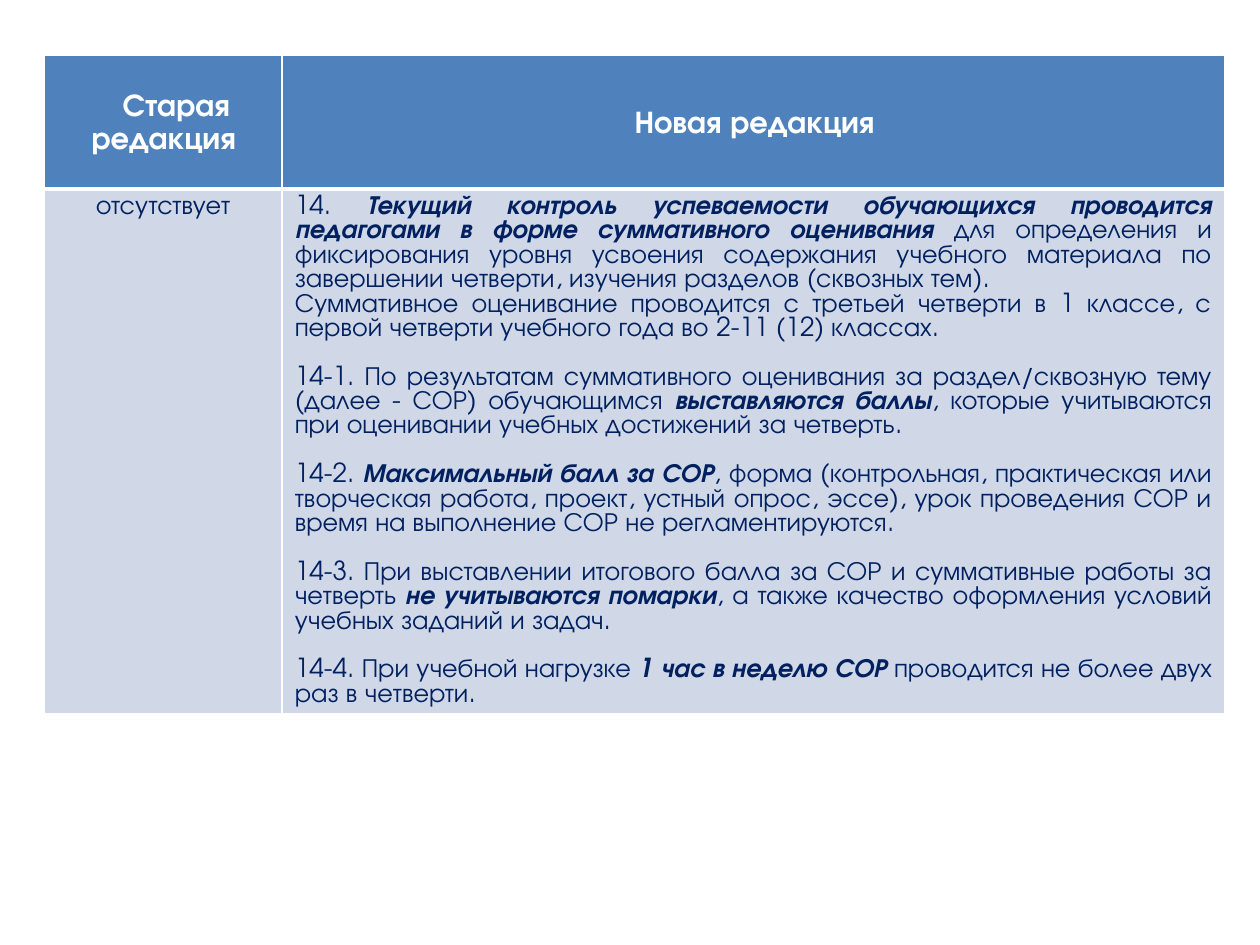
from lxml import etree
from pptx import Presentation
from pptx.dml.color import RGBColor
from pptx.enum.text import MSO_ANCHOR, PP_ALIGN
from pptx.oxml.ns import qn
from pptx.util import Inches, Pt

CENTER, JUSTIFY = PP_ALIGN.CENTER, PP_ALIGN.JUSTIFY
MIDDLE = MSO_ANCHOR.MIDDLE
WHITE = RGBColor(0xFF, 0xFF, 0xFF)
NAVY = RGBColor(0x00, 0x20, 0x60)
HEADER_BLUE = RGBColor(0x4F, 0x81, 0xBD)
BODY_BLUE = RGBColor(0xD0, 0xD8, 0xE8)
FONT = "TeX Gyre Adventor"
BLANK_LAYOUT = 6
COLUMN_WIDTHS = (1.89, 7.48)
ROW_HEIGHTS = (1.06, 4.15)
HEADERS = (("Старая редакция", 0.01, 0.2), ("Новая редакция", 0.02, 0))
ABSENT = "отсутствует"

# Each paragraph alternates plain and emphasised text, starting with plain.
NEW_WORDING = (
    (("14. ",
      "Текущий контроль успеваемости обучающихся проводится педагогами "
      "в форме суммативного оценивания ",
      "для определения и фиксирования уровня усвоения содержания учебного "
      "материала по завершении четверти, изучения разделов (сквозных тем)."), 0),
    (("Суммативное оценивание проводится с третьей четверти в 1 классе, "
      "с первой четверти учебного года во 2-11 (12) классах.",), 14),
    (("14-1. По результатам суммативного оценивания за раздел/сквозную тему "
      "(далее - СОР) обучающимся ",
      "выставляются баллы",
      ", которые учитываются при оценивании учебных достижений за четверть."), 14),
    (("14-2. ",
      "Максимальный балл за СОР",
      ", форма (контрольная, практическая или творческая работа, проект, "
      "устный опрос, эссе), урок проведения СОР и время на выполнение СОР "
      "не регламентируются."), 14),
    (("14-3. При выставлении итогового балла за СОР и суммативные работы "
      "за четверть ",
      "не учитываются помарки",
      ", а также качество оформления условий учебных заданий и задач."), 14),
    (("14-4. При учебной нагрузке ",
      "1 час в неделю СОР ",
      "проводится не более двух раз в четверти."), 0),
)


def format_run(run, size, color, bold=False, italic=False):
    font = run.font
    font.name, font.size = FONT, Pt(size)
    font.bold, font.italic = bold, italic
    font.color.rgb = color


def style_cell(cell, fill, top, bottom):
    properties = cell._tc.get_or_add_tcPr()
    for side, width in (("L", 1), ("R", 1), ("T", top), ("B", bottom)):
        line = etree.SubElement(properties, qn(f"a:ln{side}"), w=str(Pt(width)))
        solid = etree.SubElement(line, qn("a:solidFill"))
        etree.SubElement(solid, qn("a:srgbClr"), val=str(WHITE))
    cell.fill.solid()
    cell.fill.fore_color.rgb = fill


def fill_header_cell(cell, text, margin, indent):
    style_cell(cell, HEADER_BLUE, top=1, bottom=3)
    cell.vertical_anchor = MIDDLE
    cell.margin_left = cell.margin_right = Inches(0.07)
    cell.margin_top = cell.margin_bottom = 0
    cell.text_frame.text = text
    paragraph = cell.text_frame.paragraphs[0]
    paragraph.alignment = CENTER
    paragraph.line_spacing = 1.15
    paragraph_properties = paragraph._p.get_or_add_pPr()
    paragraph_properties.set("marL", str(Inches(margin)))
    paragraph_properties.set("indent", str(Inches(indent)))
    format_run(paragraph.runs[0], 18, WHITE, bold=True)


def fill_body_cell(cell, paragraphs, alignment):
    style_cell(cell, BODY_BLUE, top=3, bottom=1)
    text_frame = cell.text_frame
    for index, (pieces, space_after) in enumerate(paragraphs):
        paragraph = text_frame.add_paragraph() if index else text_frame.paragraphs[0]
        paragraph.alignment = alignment
        paragraph.space_after = Pt(space_after)
        for position, piece in enumerate(pieces):
            run = paragraph.add_run()
            run.text = piece
            emphasised = position % 2 == 1
            format_run(run, 15, NAVY, emphasised, emphasised)


def add_comparison_table(slide, left, top):
    frame = slide.shapes.add_table(
        len(ROW_HEIGHTS), len(COLUMN_WIDTHS), left, top,
        Inches(sum(COLUMN_WIDTHS)), Inches(sum(ROW_HEIGHTS)))
    table = frame.table
    for column, width in zip(table.columns, COLUMN_WIDTHS):
        column.width = Inches(width)
    for row, height in zip(table.rows, ROW_HEIGHTS):
        row.height = Inches(height)
    for index, header in enumerate(HEADERS):
        fill_header_cell(table.cell(0, index), *header)
    fill_body_cell(table.cell(1, 0), (((ABSENT,), 0),), CENTER)
    fill_body_cell(table.cell(1, 1), NEW_WORDING, JUSTIFY)


def main():
    presentation = Presentation()
    presentation.slide_width, presentation.slide_height = Inches(10), Inches(7.5)
    slide = presentation.slides.add_slide(presentation.slide_layouts[BLANK_LAYOUT])
    add_comparison_table(slide, Inches(0.35), Inches(0.44))
    presentation.save("out.pptx")


if __name__ == "__main__":
    main()
